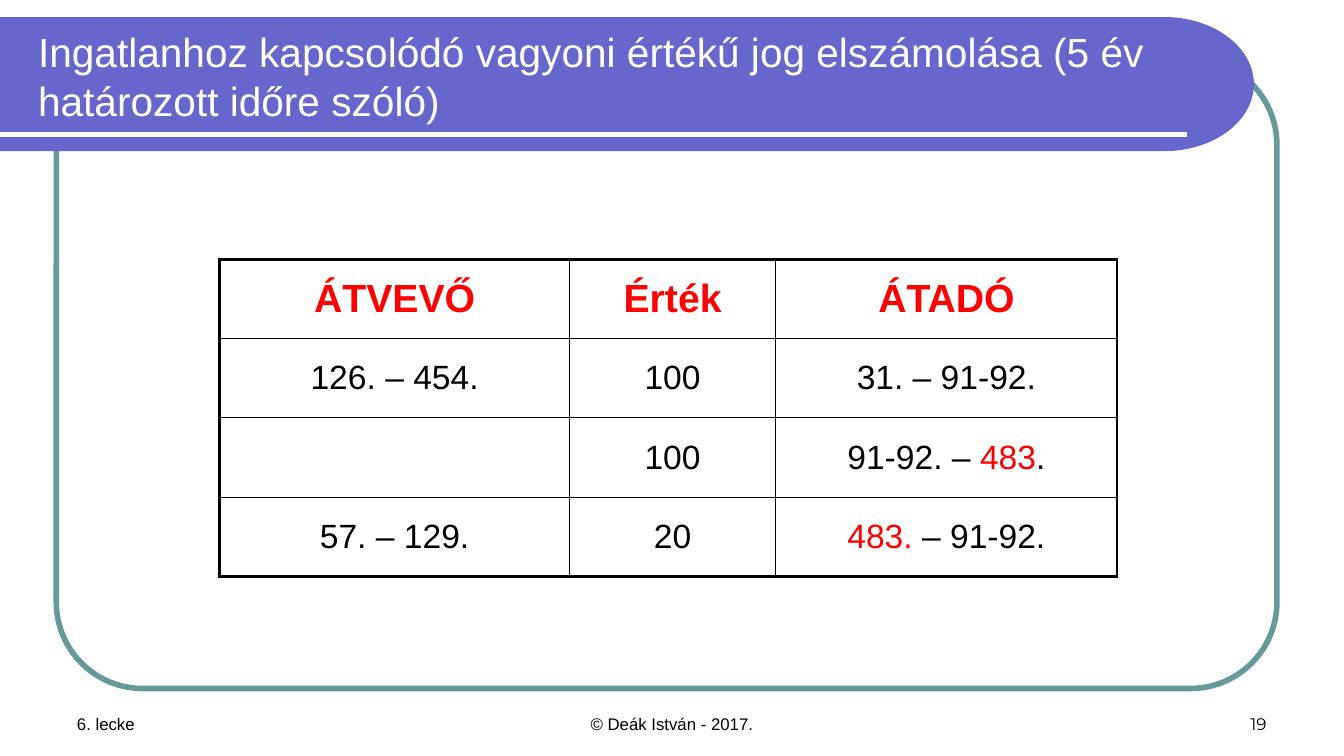
import math

import pptx
import pptx.dml.color
import pptx.enum.shapes
import pptx.enum.text
import pptx.oxml
import pptx.oxml.ns
import pptx.util

Cm = pptx.util.Cm
Pt = pptx.util.Pt
RGBColor = pptx.dml.color.RGBColor
ALIGN = pptx.enum.text.PP_ALIGN
ANCHOR = pptx.enum.text.MSO_ANCHOR

BLACK = RGBColor(0, 0, 0)
WHITE = RGBColor(255, 255, 255)
RED = RGBColor(255, 0, 0)
TEAL = RGBColor(0x66, 0x99, 0x99)
VIOLET = RGBColor(0x66, 0x66, 0xCC)


def add_text(box, text, size, color, align, anchor, font="Arial"):
    left, top, width, height = [Cm(n) for n in box]
    frame = slide.shapes.add_textbox(left, top, width, height).text_frame
    frame.word_wrap = True
    frame.vertical_anchor = anchor
    par = frame.paragraphs[0]
    par.text = text
    par.alignment = align
    par.font.name = font
    par.font.size = Pt(size)
    par.font.color.rgb = color


def set_edges(cell, widths):
    """Draw black cell borders; widths in points: left, right, top, bottom."""
    props = cell._tc.get_or_add_tcPr()
    for place, (side, width) in enumerate(zip("LRTB", widths)):
        props.insert(place, pptx.oxml.parse_xml(
            f'<a:ln{side} {pptx.oxml.ns.nsdecls("a")} w="{Pt(width)}">'
            f'<a:solidFill><a:srgbClr val="{BLACK}"/></a:solidFill></a:ln{side}>'))


deck = pptx.Presentation()
deck.slide_width = Cm(33.87)
deck.slide_height = Cm(19.05)
slide = deck.slides.add_slide(deck.slide_layouts[6])

# Rounded frame
frame = slide.shapes.add_shape(
    pptx.enum.shapes.MSO_SHAPE.ROUNDED_RECTANGLE,
    Cm(1.42), Cm(1.47), Cm(30.76), Cm(15.88))
frame.adjustments[0] = 0.137
frame.shadow.inherit = False
frame.fill.background()
frame.line.color.rgb = TEAL
frame.line.width = Pt(4)

# Title band with a half-ellipse at its right end
mid_x, mid_y, wide, high = 29.34, 2.12, 2.26, 1.69
arc = []
for step in range(-45, 46):
    turn = math.radians(step * 2)
    arc.append((Cm(mid_x + wide * math.cos(turn)), Cm(mid_y + high * math.sin(turn))))
path = slide.shapes.build_freeform(0, Cm(mid_y - high))
path.add_line_segments(arc + [(0, Cm(mid_y + high))], close=True)
band = path.convert_to_shape()
band.shadow.inherit = False
band.fill.solid()
band.fill.fore_color.rgb = VIOLET
band.line.fill.background()

rule = slide.shapes.add_connector(
    pptx.enum.shapes.MSO_CONNECTOR.STRAIGHT, 0, Cm(3.39), Cm(29.92), Cm(3.39))
rule.line.color.rgb = WHITE
rule.line.width = Pt(3)
rule._element.spPr.append(pptx.oxml.parse_xml(
    f'<a:effectLst {pptx.oxml.ns.nsdecls("a")}/>'))

# Title and footer
add_text((0.71, 0.64, 29.7, 2.54),
         "Ingatlanhoz kapcsolódó vagyoni értékű jog elszámolása "
         "(5 év határozott időre szóló)",
         29, WHITE, ALIGN.LEFT, ANCHOR.MIDDLE)
for left, width, text, align, font in [
    (1.69, 7.9, "6. lecke", ALIGN.LEFT, "Arial"),
    (11.57, 10.73, "© Deák István - 2017.", ALIGN.CENTER, "Arial"),
    (24.27, 7.9, "19", ALIGN.RIGHT, "Montserrat"),
]:
    add_text((left, 17.36, width, 1.27), text, 12, BLACK, align, ANCHOR.BOTTOM, font)

# Table: each cell is a list of (text, colour) runs
rows = [
    [[("ÁTVEVŐ", RED)], [("Érték", RED)], [("ÁTADÓ", RED)]],
    [[("126. – 454.", BLACK)], [("100", BLACK)], [("31. – 91-92.", BLACK)]],
    [[], [("100", BLACK)], [("91-92. – ", BLACK), ("483", RED), (".", BLACK)]],
    [[("57. – 129.", BLACK)], [("20", BLACK)], [("483.", RED), (" – 91-92.", BLACK)]],
]
cols = [8.81, 5.2, 8.6]
tall = 2.0
thin, thick = 1, 2.25
last_row, last_col = len(rows) - 1, len(cols) - 1

table = slide.shapes.add_table(
    len(rows), len(cols), Cm(5.54), Cm(6.53),
    Cm(sum(cols)), Cm(tall * len(rows))).table
table.first_row = False
table.horz_banding = False
for col, width in enumerate(cols):
    table.columns[col].width = Cm(width)
for row, cells in enumerate(rows):
    table.rows[row].height = Cm(tall)
    for col, runs in enumerate(cells):
        cell = table.cell(row, col)
        cell.fill.background()
        cell.vertical_anchor = ANCHOR.MIDDLE
        outer = (col == 0, col == last_col, row == 0, row == last_row)
        set_edges(cell, [thick if edge else thin for edge in outer])
        par = cell.text_frame.paragraphs[0]
        par.alignment = ALIGN.CENTER
        par.font.name = "Arial"
        par.font.size = Pt(28 if row == 0 else 24)
        par.font.bold = row == 0
        for text, color in runs:
            run = par.add_run()
            run.text = text
            run.font.color.rgb = color

deck.save("out.pptx")
